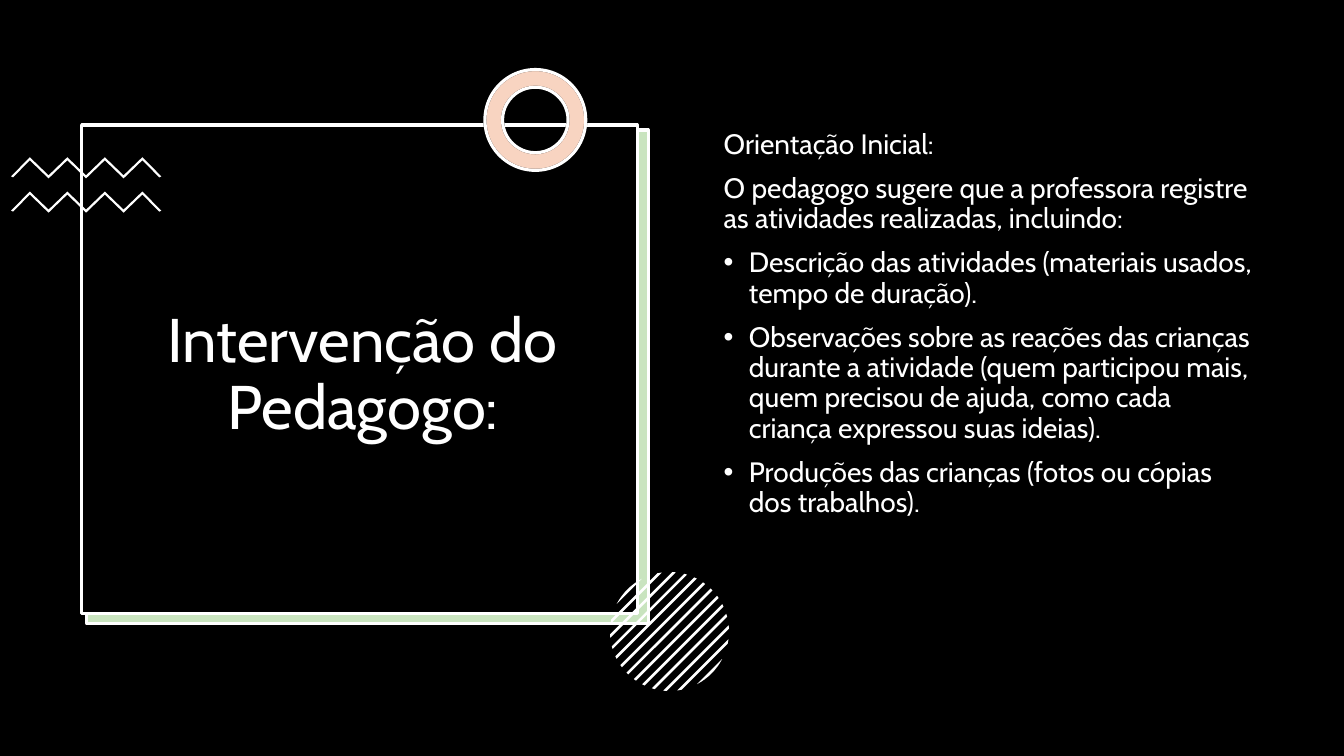
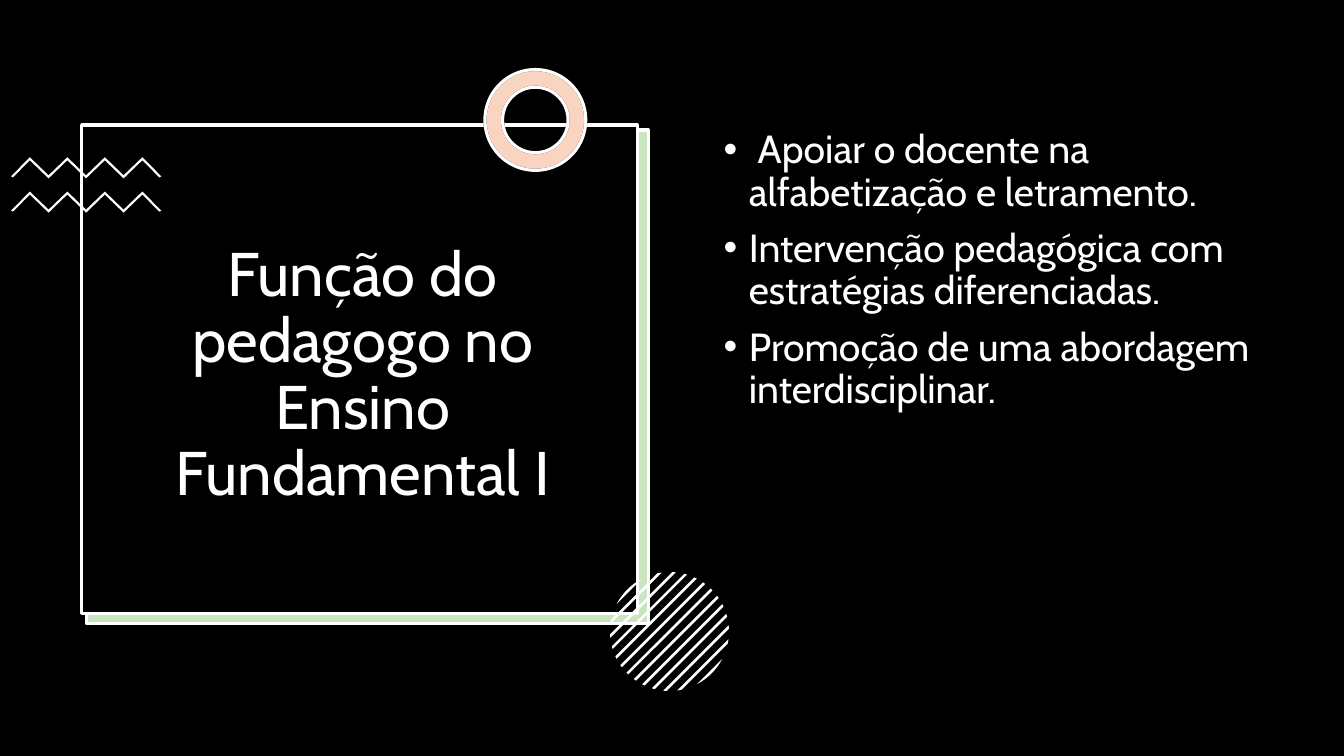
"""Build two slides on the role of the pedagogue, sharing one decorated title frame."""
import math
from dataclasses import dataclass
from typing import Any, Optional

import lxml.etree
import pptx
import pptx.dml.color
import pptx.enum.shapes
import pptx.enum.text
import pptx.oxml.ns
import pptx.shapes.autoshape
import pptx.shapes.shapetree
import pptx.slide
import pptx.util

Inches = pptx.util.Inches
Pt = pptx.util.Pt
qn = pptx.oxml.ns.qn
Shape = pptx.shapes.autoshape.Shape
Point = tuple[float, float]
Box = tuple[float, float, float, float]

COLORS = {"black": "000000", "white": "FFFFFF", "green": "4EA72E", "orange": "E97132"}
FONT = "Cabin"
RECTANGLE = pptx.enum.shapes.MSO_SHAPE.RECTANGLE
DONUT = pptx.enum.shapes.MSO_SHAPE.DONUT
ANCHOR = pptx.enum.text.MSO_ANCHOR
ALIGN = pptx.enum.text.PP_ALIGN

TITLE_BOX: Box = (0.92, 1.52, 5.36, 4.42)
BODY_BOX: Box = (7.08, 1.24, 5.44, 4.76)
RING_BOX: Box = (4.81, 0.69, 1, 1)
RING_THICKNESS = 0.175

TITLE_FRAME = {"word_wrap": True, "vertical_anchor": ANCHOR.MIDDLE}
BODY_FRAME = {"word_wrap": True, "vertical_anchor": ANCHOR.TOP}
TITLE_PARAGRAPH = {"alignment": ALIGN.CENTER, "line_spacing": 0.9}
BODY_PARAGRAPH = {"alignment": ALIGN.LEFT, "line_spacing": 0.9, "space_before": Pt(10)}


@dataclass(frozen=True)
class Ornament:
    kind: Any
    box: Box
    fill: str
    opacity: int = 100
    line: Optional[str] = None


@dataclass(frozen=True)
class Item:
    text: str
    bulleted: bool = True


@dataclass(frozen=True)
class Topic:
    title: str
    body_size: int
    items: tuple[Item, ...]


ORNAMENTS_BEHIND = (
    Ornament(RECTANGLE, (0.85, 1.3, 5.57, 4.9), "white"),
    Ornament(RECTANGLE, (0.86, 1.29, 5.57, 4.9), "green", 30, "white"),
    Ornament(RECTANGLE, (0.81, 1.24, 5.51, 4.85), "black", line="white"),
)
RINGS = (
    Ornament(DONUT, RING_BOX, "white", line="black"),
    Ornament(DONUT, RING_BOX, "orange", 30, "white"),
)

TOPICS = (
    Topic("Intervenção do Pedagogo:", 20, (
        Item("Orientação Inicial:", False),
        Item("O pedagogo sugere que a professora registre as atividades "
             "realizadas, incluindo:", False),
        Item("Descrição das atividades (materiais usados, tempo de duração)."),
        Item("Observações sobre as reações das crianças durante a atividade "
             "(quem participou mais, quem precisou de ajuda, como cada criança "
             "expressou suas ideias)."),
        Item("Produções das crianças (fotos ou cópias dos trabalhos)."),
    )),
    Topic("Função do pedagogo no Ensino Fundamental I", 28, (
        Item(" Apoiar o docente na alfabetização e letramento."),
        Item("Intervenção pedagógica com estratégias diferenciadas."),
        Item("Promoção de uma abordagem interdisciplinar."),
    )),
)


def color(name: str) -> pptx.dml.color.RGBColor:
    return pptx.dml.color.RGBColor.from_string(COLORS[name])


def apply(target: Any, values: dict[str, Any]) -> None:
    for key, value in values.items():
        setattr(target, key, value)


def paint(shape: Shape, fill: str, opacity: int = 100, line: Optional[str] = None) -> None:
    shape.shadow.inherit = False
    shape.fill.solid()
    shape.fill.fore_color.rgb = color(fill)
    if opacity < 100:
        tint = shape.element.spPr.find(qn("a:solidFill"))[0]
        lxml.etree.SubElement(tint, qn("a:alpha"), val=str(opacity * 1000))
    if line is None:
        shape.line.fill.background()
    else:
        shape.line.color.rgb = color(line)
        shape.line.width = Pt(2.25)


def draw_ornament(slide: pptx.slide.Slide, ornament: Ornament) -> None:
    shape = slide.shapes.add_shape(ornament.kind, *map(Inches, ornament.box))
    if ornament.kind == DONUT:
        shape.adjustments[0] = RING_THICKNESS
    paint(shape, ornament.fill, ornament.opacity, ornament.line)


def draw_outline(shapes: pptx.shapes.shapetree.GroupShapes, points: list[Point]) -> None:
    start, *rest = [(Inches(x), Inches(y)) for x, y in points]
    builder = shapes.build_freeform(*start)
    builder.add_line_segments(rest, close=True)
    paint(builder.convert_to_shape(), "white")


def draw_zigzags(slide: pptx.slide.Slide) -> None:
    left, right, pitch, thickness = 0.11, 1.6, 0.186, 0.03
    group = slide.shapes.add_group_shape()
    for top in (1.56, 1.9):
        bends = [(left + pitch * i, top + (0 if i % 2 else 0.18)) for i in range(1, 8)]
        lower = [(x, y + thickness) for x, y in reversed(bends)]
        draw_outline(group.shapes, [
            (left, top + 0.19), *bends, (right, top + 0.19),
            (right - 0.02, top + 0.2), *lower, (left + 0.02, top + 0.2),
        ])


def draw_striped_disc(slide: pptx.slide.Slide) -> None:
    center_x, center_y, radius = 6.64, 6.265, 0.59
    pitch, half_width, arc_steps = 0.096, 0.013, 4
    diagonal = math.sqrt(0.5)
    group = slide.shapes.add_group_shape()
    for index in range(-6, 7):
        near = pitch * index - half_width
        offsets = [near + 2 * half_width * step / arc_steps for step in range(arc_steps + 1)]
        chords = [(d, math.sqrt(max(radius ** 2 - d ** 2, 0))) for d in offsets]
        rim = chords + [(d, -half) for d, half in reversed(chords)]
        draw_outline(group.shapes, [
            (center_x + (d + along) * diagonal, center_y + (d - along) * diagonal)
            for d, along in rim
        ])


def add_bullet(paragraph: Any) -> None:
    properties = paragraph._p.get_or_add_pPr()
    indent = Inches(0.25)
    properties.set("marL", str(indent))
    properties.set("indent", str(-indent))
    lxml.etree.SubElement(properties, qn("a:buFont"), typeface="Arial")
    lxml.etree.SubElement(properties, qn("a:buChar"), char="•")


def write(slide: pptx.slide.Slide, box: Box, items: tuple[Item, ...], size: int,
          frame_format: dict[str, Any], paragraph_format: dict[str, Any]) -> None:
    frame = slide.shapes.add_textbox(*map(Inches, box)).text_frame
    apply(frame, frame_format)
    for index, item in enumerate(items):
        paragraph = frame.add_paragraph() if index else frame.paragraphs[0]
        apply(paragraph, paragraph_format)
        if item.bulleted:
            add_bullet(paragraph)
        run = paragraph.add_run()
        run.text = item.text
        apply(run.font, {"name": FONT, "size": Pt(size)})
        run.font.color.rgb = color("white")


def build_slide(deck: Any, topic: Topic) -> None:
    slide = deck.slides.add_slide(deck.slide_layouts[6])
    slide.background.fill.solid()
    slide.background.fill.fore_color.rgb = color("black")
    for ornament in ORNAMENTS_BEHIND:
        draw_ornament(slide, ornament)
    draw_zigzags(slide)
    for ring in RINGS:
        draw_ornament(slide, ring)
    draw_striped_disc(slide)
    write(slide, TITLE_BOX, (Item(topic.title, False),), 44, TITLE_FRAME, TITLE_PARAGRAPH)
    write(slide, BODY_BOX, topic.items, topic.body_size, BODY_FRAME, BODY_PARAGRAPH)


def main() -> None:
    deck = pptx.Presentation()
    apply(deck, {"slide_width": Inches(13.33), "slide_height": Inches(7.5)})
    for topic in TOPICS:
        build_slide(deck, topic)
    deck.save("out.pptx")


if __name__ == "__main__":
    main()
